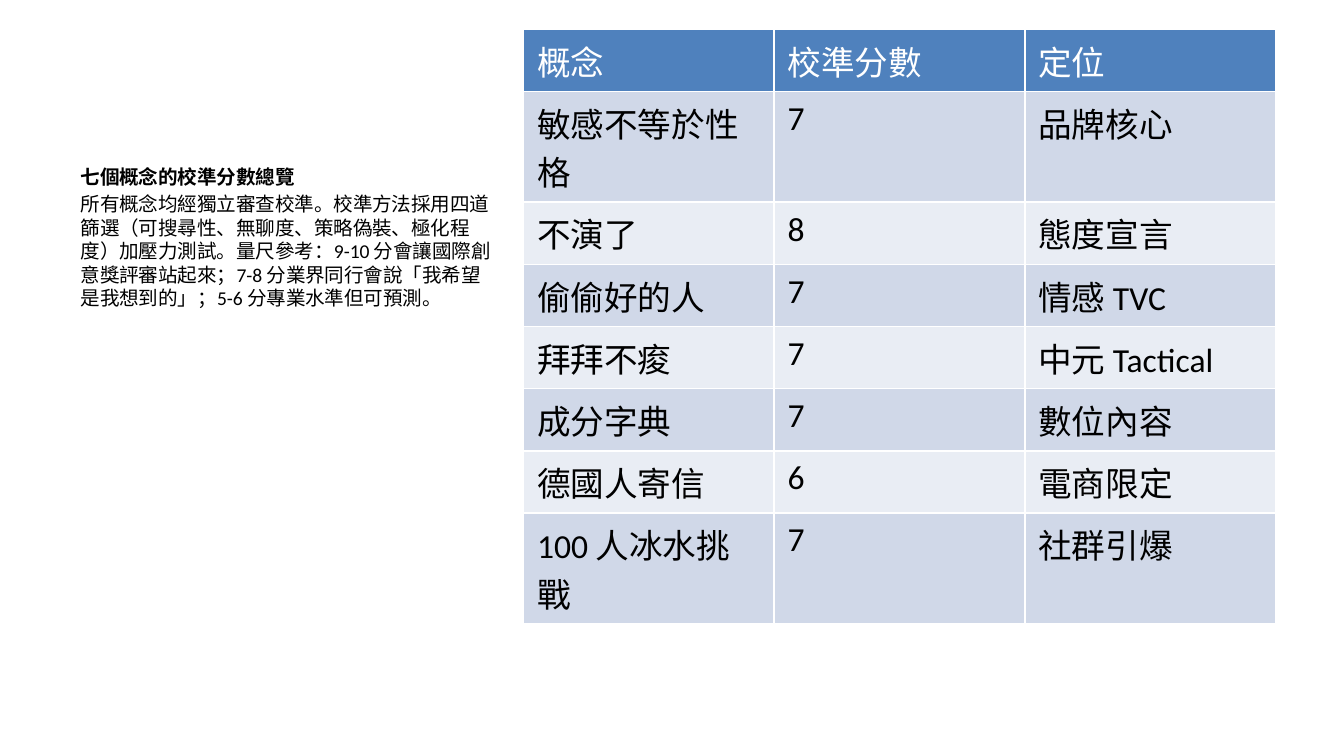
from pptx import Presentation
from pptx.dml.color import RGBColor
from pptx.enum.text import MSO_AUTO_SIZE
from pptx.util import Pt

PX = 9525  # EMU per pixel, 96 pixels to the inch
CAPTION_LAYOUT = 7
CAPTION_INDEX = 2
NO_AUTOFIT = MSO_AUTO_SIZE.NONE
FONT = "Calibri"
COLORS = {
    "header": "4F81BD",
    "odd_band": "D0D8E8",
    "even_band": "E9EDF4",
    "header_text": "FFFFFF",
    "text": "000000",
}

HEADING = "七個概念的校準分數總覽"
SUMMARY = (
    "所有概念均經獨立審查校準。校準方法採用四道篩選（可搜尋性、無聊度、策略偽裝、極化程度）"
    "加壓力測試。量尺參考：9-10 分會讓國際創意獎評審站起來；"
    "7-8 分業界同行會說「我希望是我想到的」；5-6 分專業水準但可預測。"
)
SCORES = [
    ("概念", "校準分數", "定位"),
    ("敏感不等於性格", "7", "品牌核心"),
    ("不演了", "8", "態度宣言"),
    ("偷偷好的人", "7", "情感 TVC"),
    ("拜拜不痠", "7", "中元 Tactical"),
    ("成分字典", "7", "數位內容"),
    ("德國人寄信", "6", "電商限定"),
    ("100 人冰水挑戰", "7", "社群引爆"),
]
COLUMN_WIDTH = 179
ROW_HEIGHT = 44
TALL_ROW_HEIGHT = 79
WRAP_LENGTH = 6  # longer concept names take two lines


def px(value):
    return value * PX


def color(name):
    return RGBColor.from_string(COLORS[name])


def format_text(para, size, color_name, bold=False):
    for span in para.runs:
        span.font.name = FONT
        span.font.size = Pt(size)
        span.font.bold = bold
        span.font.color.rgb = color(color_name)


def fill_caption(page):
    """Place the heading and summary in the caption placeholder."""
    for holder in list(page.placeholders):
        if holder.placeholder_format.idx != CAPTION_INDEX:
            holder.element.getparent().remove(holder.element)
    box = page.placeholders[CAPTION_INDEX]
    box.left, box.top, box.width, box.height = map(px, (48, 113, 316, 370))
    frame = box.text_frame
    frame.auto_size = NO_AUTOFIT
    frame.text = f"{HEADING}\n{SUMMARY}"
    for index, para in enumerate(frame.paragraphs):
        format_text(para, 10.5, "text", bold=index == 0)


def add_score_table(page):
    """Add the table with a header and alternating bands."""
    columns = len(SCORES[0])
    table = page.shapes.add_table(
        len(SCORES), columns, px(374), px(21),
        px(COLUMN_WIDTH * columns), px(ROW_HEIGHT * len(SCORES)),
    ).table
    for index, values in enumerate(SCORES):
        is_tall = len(values[0]) > WRAP_LENGTH
        table.rows[index].height = px(TALL_ROW_HEIGHT if is_tall else ROW_HEIGHT)
        band = "header" if index == 0 else "odd_band" if index % 2 else "even_band"
        text_color = "header_text" if index == 0 else "text"
        for cell, value in zip(table.rows[index].cells, values):
            cell.text = value
            cell.fill.solid()
            cell.fill.fore_color.rgb = color(band)
            format_text(cell.text_frame.paragraphs[0], 18, text_color)


def main():
    deck = Presentation()
    deck.slide_width, deck.slide_height = px(960), px(540)
    page = deck.slides.add_slide(deck.slide_layouts[CAPTION_LAYOUT])
    fill_caption(page)
    add_score_table(page)
    deck.save("out.pptx")


if __name__ == "__main__":
    main()
